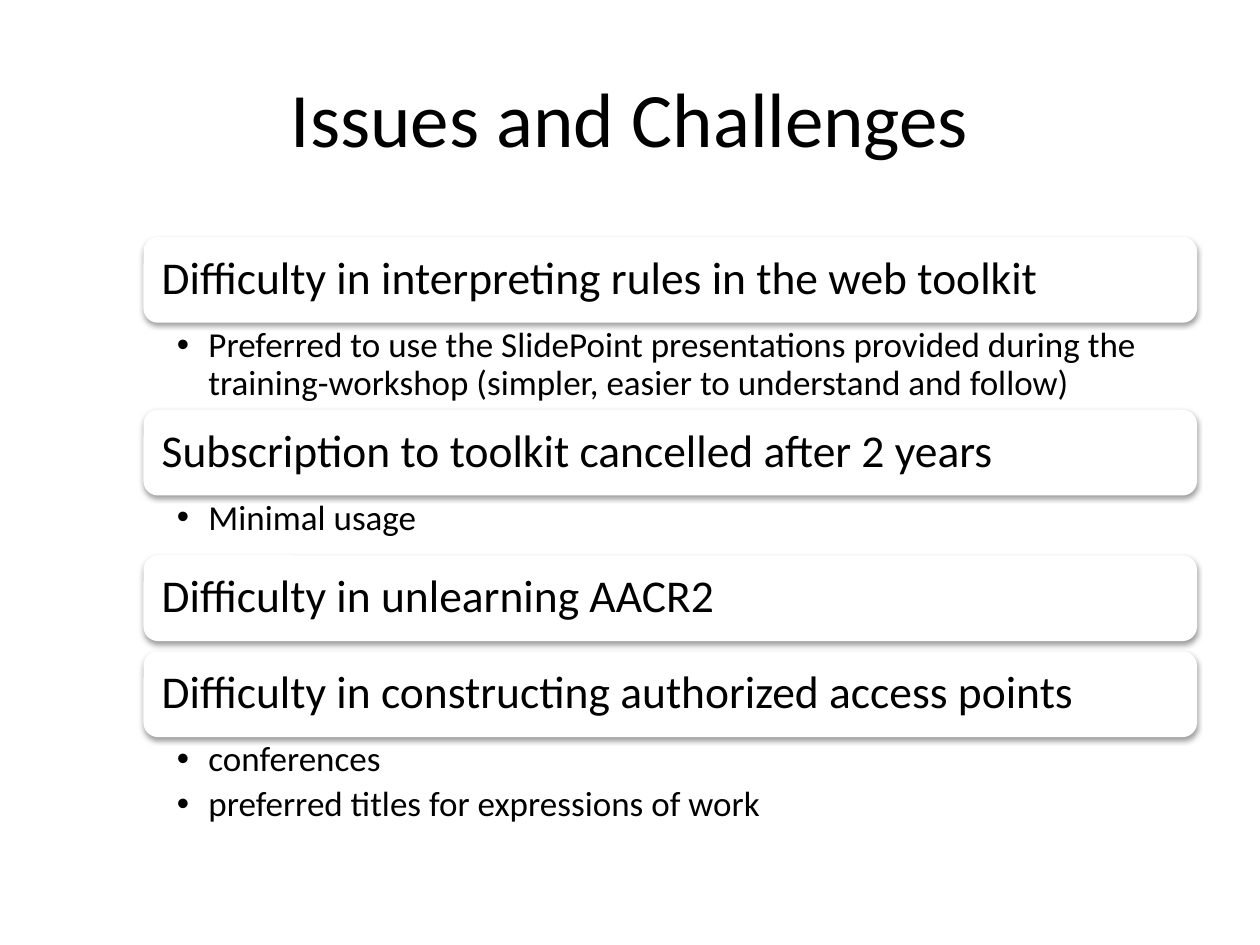
from dataclasses import dataclass

from lxml.etree import SubElement
from pptx import Presentation
from pptx.dml.color import RGBColor
from pptx.enum.shapes import MSO_SHAPE
from pptx.enum.text import MSO_ANCHOR, PP_ALIGN
from pptx.oxml.ns import qn
from pptx.util import Pt


@dataclass(frozen=True)
class Theme:
    font: str = "Calibri"
    ink: RGBColor = RGBColor(0, 0, 0)
    paper: RGBColor = RGBColor(255, 255, 255)
    title: int = 44
    head: int = 26
    item: int = 20


LEFT, WIDTH = 82, 602
TOP = 135.4
HEAD = 49
GAP = 5.9

# Heading, its bullets, and the height of the space below the heading
TOPICS = [
    ("Difficulty in interpreting rules in the web toolkit",
     ["Preferred to use the SlidePoint presentations provided during the "
      "training-workshop (simpler, easier to understand and follow)"], 49.7),
    ("Subscription to toolkit cancelled after 2 years", ["Minimal usage"], 34.2),
    ("Difficulty in unlearning AACR2", [], GAP),
    ("Difficulty in constructing authorized access points",
     ["conferences", "preferred titles for expressions of work"], 54),
]


class Deck:
    def __init__(self, theme, slide):
        self.theme = theme
        self.slide = slide

    def style(self, par, size, align=PP_ALIGN.LEFT, spacing=0.9):
        par.alignment = align
        par.line_spacing = spacing
        for run in par.runs:
            run.font.name = self.theme.font
            run.font.size = Pt(size)
            run.font.color.rgb = self.theme.ink

    def inset(self, frame, left, top, right, bottom):
        frame.margin_left, frame.margin_top = Pt(left), Pt(top)
        frame.margin_right, frame.margin_bottom = Pt(right), Pt(bottom)
        frame.word_wrap = True

    def title(self, text):
        box = self.slide.shapes.title
        box.left, box.top, box.width, box.height = Pt(36), Pt(21.6), Pt(648), Pt(90)
        frame = box.text_frame
        frame.text = text
        frame.vertical_anchor = MSO_ANCHOR.MIDDLE
        self.style(frame.paragraphs[0], self.theme.title, PP_ALIGN.CENTER, 1.0)

    def shade(self, shape):
        """Give the shape a soft shadow straight below it."""
        shape.shadow.inherit = False
        effects = shape._element.spPr.find(qn("a:effectLst"))
        outer = SubElement(effects, qn("a:outerShdw"), blurRad=str(Pt(3.1)),
                           dist=str(Pt(1.6)), dir="5400000", rotWithShape="0")
        color = SubElement(outer, qn("a:srgbClr"), val=str(self.theme.ink))
        SubElement(color, qn("a:alpha"), val="38000")

    def head(self, text, top):
        bar = self.slide.shapes.add_shape(
            MSO_SHAPE.ROUNDED_RECTANGLE, Pt(LEFT), Pt(top), Pt(WIDTH), Pt(HEAD))
        bar.adjustments[0] = 0.167
        bar.fill.solid()
        bar.fill.fore_color.rgb = self.theme.paper
        bar.line.fill.background()
        self.shade(bar)
        frame = bar.text_frame
        self.inset(frame, 8, 8, 8, 8)
        frame.vertical_anchor = MSO_ANCHOR.MIDDLE
        frame.text = text
        self.style(frame.paragraphs[0], self.theme.head)

    def bullet(self, par):
        props = par._p.get_or_add_pPr()
        props.set("marL", str(Pt(18)))
        props.set("indent", str(Pt(-18)))
        props.set("lvl", "1")
        color = SubElement(props, qn("a:buClr"))
        SubElement(color, qn("a:srgbClr"), val=str(self.theme.ink))
        SubElement(props, qn("a:buFont"), typeface="Arial")
        SubElement(props, qn("a:buChar"), char="•")

    def items(self, lines, top, height):
        box = self.slide.shapes.add_textbox(Pt(LEFT), Pt(top), Pt(WIDTH), Pt(height))
        frame = box.text_frame
        self.inset(frame, 19.1, 2.6, 14.2, 2.6)
        frame.text = "\n".join(lines)
        for i, par in enumerate(frame.paragraphs):
            self.bullet(par)
            self.style(par, self.theme.item)
            if i:
                par.space_before = Pt(4)


def main():
    prs = Presentation()
    prs.slide_width, prs.slide_height = Pt(720), Pt(540)
    deck = Deck(Theme(), prs.slides.add_slide(prs.slide_layouts[5]))
    deck.title("Issues and Challenges")
    top = TOP
    for text, lines, below in TOPICS:
        deck.head(text, top)
        top += HEAD
        if lines:
            deck.items(lines, top, below)
        top += below
    prs.save("out.pptx")


if __name__ == "__main__":
    main()
